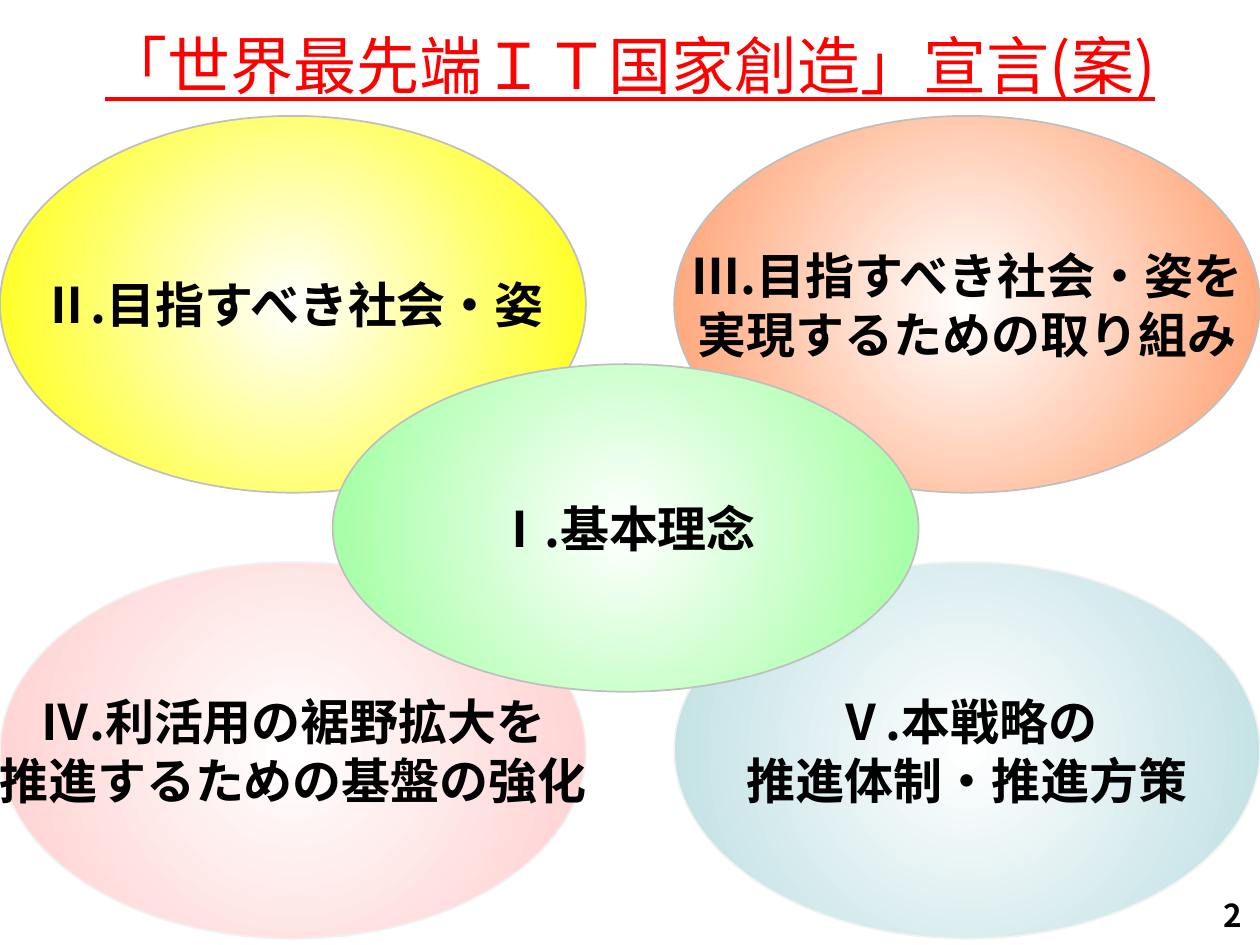
"""Build the slide of five overlapping chapter ovals of the IT declaration."""
from dataclasses import dataclass

from pptx import Presentation
from pptx.dml.color import RGBColor
from pptx.enum.shapes import MSO_SHAPE as Shape
from pptx.enum.text import MSO_ANCHOR as Anchor, PP_ALIGN as Align
from pptx.oxml.ns import qn
from pptx.slide import Slide
from pptx.text.text import TextFrame
from pptx.util import Inches, Pt
from lxml.etree import SubElement


@dataclass(frozen=True)
class Theme:
    """Colours, font and type sizes of the slide."""
    font: str = "Noto Sans CJK JP"
    title: str = "FF0000"
    text: str = "000000"
    center: str = "FFFFFF"
    strong_edge: str = "BFBFBF"
    pale_edge: str = "F2F2F2"
    title_size: int = 36
    chapter_size: int = 28
    number_size: int = 18


@dataclass(frozen=True)
class Chapter:
    """One oval: its lines, place in inches and colours."""
    lines: tuple[str, ...]
    left: float
    top: float
    height: float
    rim: str
    edge: str


THEME = Theme()
SLIDE_WIDTH, SLIDE_HEIGHT = 10, 7.5
OVAL_WIDTH, OVAL_HEIGHT = 4.65, 2.99
LEFT, RIGHT = 0, SLIDE_WIDTH - OVAL_WIDTH
UPPER, LOWER = 0.92, 4.46
CHAPTERS = (
    Chapter(("Ⅲ.目指すべき社会・姿を", "実現するための取り組み"),
            RIGHT, UPPER, OVAL_HEIGHT, "FF9966", THEME.strong_edge),
    Chapter(("Ⅳ.利活用の裾野拡大を", "推進するための基盤の強化"),
            LEFT, LOWER, OVAL_HEIGHT, "FFCCCC", THEME.pale_edge),
    Chapter(("Ⅴ.本戦略の", "推進体制・推進方策"),
            RIGHT, LOWER, OVAL_HEIGHT, "BADDE1", THEME.pale_edge),
    Chapter(("Ⅱ.目指すべき社会・姿",),
            LEFT, UPPER, OVAL_HEIGHT, "FFFF00", THEME.strong_edge),
    Chapter(("Ⅰ.基本理念",), 2.64, 2.89, 2.6, "99FF99", THEME.strong_edge),
)


def write(frame: TextFrame, lines: tuple[str, ...], align: Align, color: str,
          **formats) -> None:
    """Fill a frame with one formatted paragraph per line."""
    frame.text = "\n".join(lines)
    for paragraph in frame.paragraphs:
        paragraph.alignment = align
        for run in paragraph.runs:
            for key, value in {"name": THEME.font, **formats}.items():
                setattr(run.font, key, value)
            run.font.color.rgb = RGBColor.from_string(color)
            east_asian = SubElement(run.font._element, qn("a:ea"))
            east_asian.set("typeface", THEME.font)
            run.font._element.find(qn("a:latin")).addnext(east_asian)


def fill_radial(fill, center: str, rim: str) -> None:
    """Give a fill a circular gradient from the center to the rim."""
    fill.gradient()
    for stop, color, position in zip(fill.gradient_stops, (center, rim), (0, 1)):
        stop.color.rgb = RGBColor.from_string(color)
        stop.position = position
    gradient = fill._fill._gradFill
    gradient.remove(gradient.find(qn("a:lin")))
    circle = SubElement(gradient, qn("a:path"), {"path": "circle"})
    SubElement(circle, qn("a:fillToRect"), dict.fromkeys("ltrb", "50000"))


def draw_chapter(slide: Slide, chapter: Chapter) -> None:
    """Draw one chapter oval with its heading."""
    oval = slide.shapes.add_shape(
        Shape.OVAL, Inches(chapter.left), Inches(chapter.top),
        Inches(OVAL_WIDTH), Inches(chapter.height))
    oval.shadow.inherit = False
    fill_radial(oval.fill, THEME.center, chapter.rim)
    oval.line.color.rgb = RGBColor.from_string(chapter.edge)
    oval.line.width = Pt(1)
    oval.text_frame.word_wrap = False
    oval.text_frame.vertical_anchor = Anchor.MIDDLE
    write(oval.text_frame, chapter.lines, Align.CENTER, THEME.text,
          size=Pt(THEME.chapter_size), bold=True)


def draw_title(slide: Slide, wording: str) -> None:
    """Place and format the title placeholder."""
    title = slide.shapes.title
    place = {"left": 0, "top": 0.21, "width": SLIDE_WIDTH, "height": 0.94}
    for key, value in place.items():
        setattr(title, key, Inches(value))
    title.text_frame.vertical_anchor = Anchor.TOP
    title.text_frame.margin_top = 0
    write(title.text_frame, (wording,), Align.CENTER, THEME.title,
          size=Pt(THEME.title_size), underline=True)


def draw_number(slide: Slide, number: str) -> None:
    """Write the page number in the lower right corner."""
    corner = slide.shapes.add_textbox(
        Inches(9.11), Inches(7.06), Inches(0.85), Inches(0.44))
    corner.text_frame.word_wrap = True
    write(corner.text_frame, (number,), Align.RIGHT, THEME.text,
          size=Pt(THEME.number_size), bold=True)


def main() -> None:
    """Build and save the slide."""
    deck = Presentation()
    deck.slide_width = Inches(SLIDE_WIDTH)
    deck.slide_height = Inches(SLIDE_HEIGHT)
    slide = deck.slides.add_slide(deck.slide_layouts.get_by_name("Title Only"))
    for chapter in CHAPTERS:
        draw_chapter(slide, chapter)
    draw_title(slide, "「世界最先端ＩＴ国家創造」宣言(案)")
    draw_number(slide, "2")
    deck.save("out.pptx")


if __name__ == "__main__":
    main()
